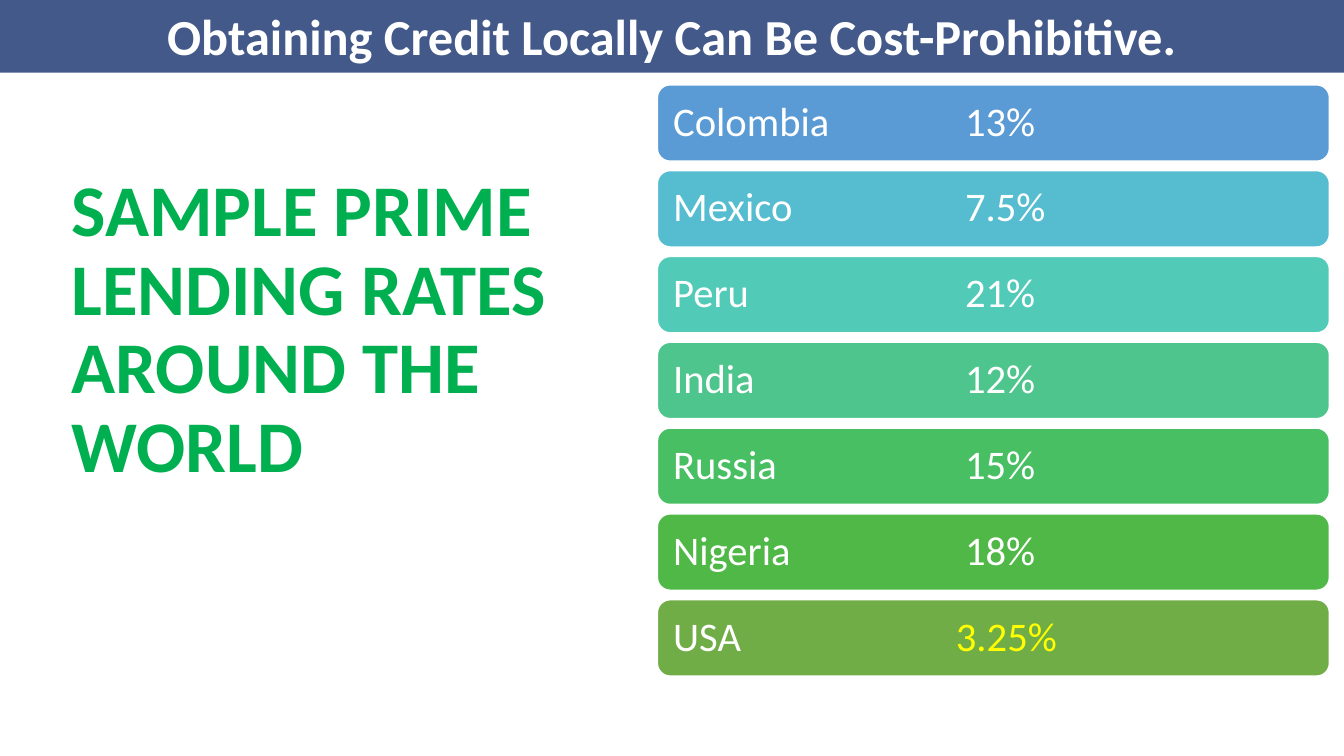
from dataclasses import dataclass

from lxml.etree import SubElement
from pptx import Presentation
from pptx.dml.color import RGBColor
from pptx.enum.shapes import MSO_SHAPE
from pptx.enum.text import MSO_ANCHOR, MSO_AUTO_SIZE, PP_ALIGN
from pptx.oxml.ns import qn
from pptx.shapes.autoshape import Shape
from pptx.slide import Slide
from pptx.text.text import _Paragraph
from pptx.util import Pt


@dataclass(frozen=True)
class Theme:
    font: str = "Calibri"
    white: str = "FFFFFF"
    navy: str = "002060"
    green: str = "00B050"
    highlight: str = "FFFF00"
    banner_size: float = 36
    title_size: float = 52
    rate_size: float = 29
    banner_opacity: int = 74


@dataclass(frozen=True)
class Box:
    left: float
    top: float
    width: float
    height: float


@dataclass(frozen=True)
class LendingRate:
    country: str
    rate: str
    fill: str
    rate_color: str = Theme.white
    rate_tab: float = 208.5


THEME = Theme()
BANNER = Box(0, -0.5, 960, 52.5)
TITLE = Box(43.9, 58.3, 387.4, 356.4)
FIRST_BAR = Box(469.6, 60.6, 480, 54.5)
BAR_PITCH = 61.3

LENDING_RATES = [
    LendingRate("Colombia", "13%", "5B9BD5"),
    LendingRate("Mexico", "7.5%", "56BCD0"),
    LendingRate("Peru", "21%", "52CAB8"),
    LendingRate("India", "12%", "4DC58D"),
    LendingRate("Russia", "15%", "49BF64"),
    LendingRate("Nigeria", "18%", "50B846"),
    LendingRate("USA", "3.25%", "70AD47", THEME.highlight, 202),
]


def apply_format(target: object, values: dict[str, object]) -> None:
    for name, value in values.items():
        setattr(target, name, value)


def place(shape: Shape, box: Box) -> None:
    apply_format(shape, {
        "left": Pt(box.left),
        "top": Pt(box.top),
        "width": Pt(box.width),
        "height": Pt(box.height),
    })


def add_text(paragraph: _Paragraph, text: str, size: float, color: str, bold: bool = False) -> None:
    run = paragraph.add_run()
    run.text = text
    apply_format(run.font, {"name": THEME.font, "size": Pt(size), "bold": bold})
    run.font.color.rgb = RGBColor.from_string(color)


def add_panel(slide: Slide, kind: MSO_SHAPE, box: Box, fill: str) -> Shape:
    shape = slide.shapes.add_shape(kind, 0, 0, 0, 0)
    place(shape, box)
    shape.shadow.inherit = False
    shape.fill.solid()
    shape.fill.fore_color.rgb = RGBColor.from_string(fill)
    return shape


def add_title(slide: Slide) -> None:
    title = slide.shapes.title
    place(title, TITLE)
    apply_format(title.text_frame, {
        "word_wrap": True,
        "auto_size": MSO_AUTO_SIZE.NONE,
        "vertical_anchor": MSO_ANCHOR.MIDDLE,
    })
    paragraph = title.text_frame.paragraphs[0]
    apply_format(paragraph, {"alignment": PP_ALIGN.LEFT, "line_spacing": 0.9, "space_before": Pt(0)})
    add_text(paragraph, "SAMPLE PRIME LENDING RATES AROUND THE WORLD", THEME.title_size, THEME.green, True)


def add_banner(slide: Slide) -> None:
    banner = add_panel(slide, MSO_SHAPE.RECTANGLE, BANNER, THEME.navy)
    banner.line.fill.background()
    color = banner.fill._xPr.find(f"{qn('a:solidFill')}/{qn('a:srgbClr')}")
    SubElement(color, qn("a:alpha"), val=str(THEME.banner_opacity * 1000))
    apply_format(banner.text_frame, {
        "word_wrap": True,
        "auto_size": MSO_AUTO_SIZE.SHAPE_TO_FIT_TEXT,
        "vertical_anchor": MSO_ANCHOR.TOP,
        "margin_left": Pt(8.6),
        "margin_right": Pt(8.6),
        "margin_top": Pt(4.3),
        "margin_bottom": Pt(4.3),
    })
    paragraph = banner.text_frame.paragraphs[0]
    paragraph.alignment = PP_ALIGN.CENTER
    add_text(paragraph, "Obtaining Credit Locally Can Be Cost-Prohibitive.", THEME.banner_size, THEME.white, True)


def add_rate_bar(slide: Slide, index: int, lending_rate: LendingRate) -> None:
    box = Box(FIRST_BAR.left, FIRST_BAR.top + index * BAR_PITCH, FIRST_BAR.width, FIRST_BAR.height)
    bar = add_panel(slide, MSO_SHAPE.ROUNDED_RECTANGLE, box, lending_rate.fill)
    bar.line.color.rgb = RGBColor.from_string(THEME.white)
    bar.line.width = Pt(1)
    apply_format(bar.text_frame, {
        "word_wrap": True,
        "vertical_anchor": MSO_ANCHOR.MIDDLE,
        "margin_left": Pt(8.6),
        "margin_right": Pt(8.6),
    })
    paragraph = bar.text_frame.paragraphs[0]
    apply_format(paragraph, {"alignment": PP_ALIGN.LEFT, "line_spacing": 0.9})
    tab_list = SubElement(paragraph._p.get_or_add_pPr(), qn("a:tabLst"))
    SubElement(tab_list, qn("a:tab"), pos=str(Pt(lending_rate.rate_tab)), algn="l")
    add_text(paragraph, f"{lending_rate.country}\t", THEME.rate_size, THEME.white)
    add_text(paragraph, lending_rate.rate, THEME.rate_size, lending_rate.rate_color)


def main() -> None:
    presentation = Presentation()
    apply_format(presentation, {"slide_width": Pt(960), "slide_height": Pt(540)})
    slide = presentation.slides.add_slide(presentation.slide_layouts.get_by_name("Title Only"))
    add_title(slide)
    add_banner(slide)
    for index, lending_rate in enumerate(LENDING_RATES):
        add_rate_bar(slide, index, lending_rate)
    presentation.save("out.pptx")


if __name__ == "__main__":
    main()
